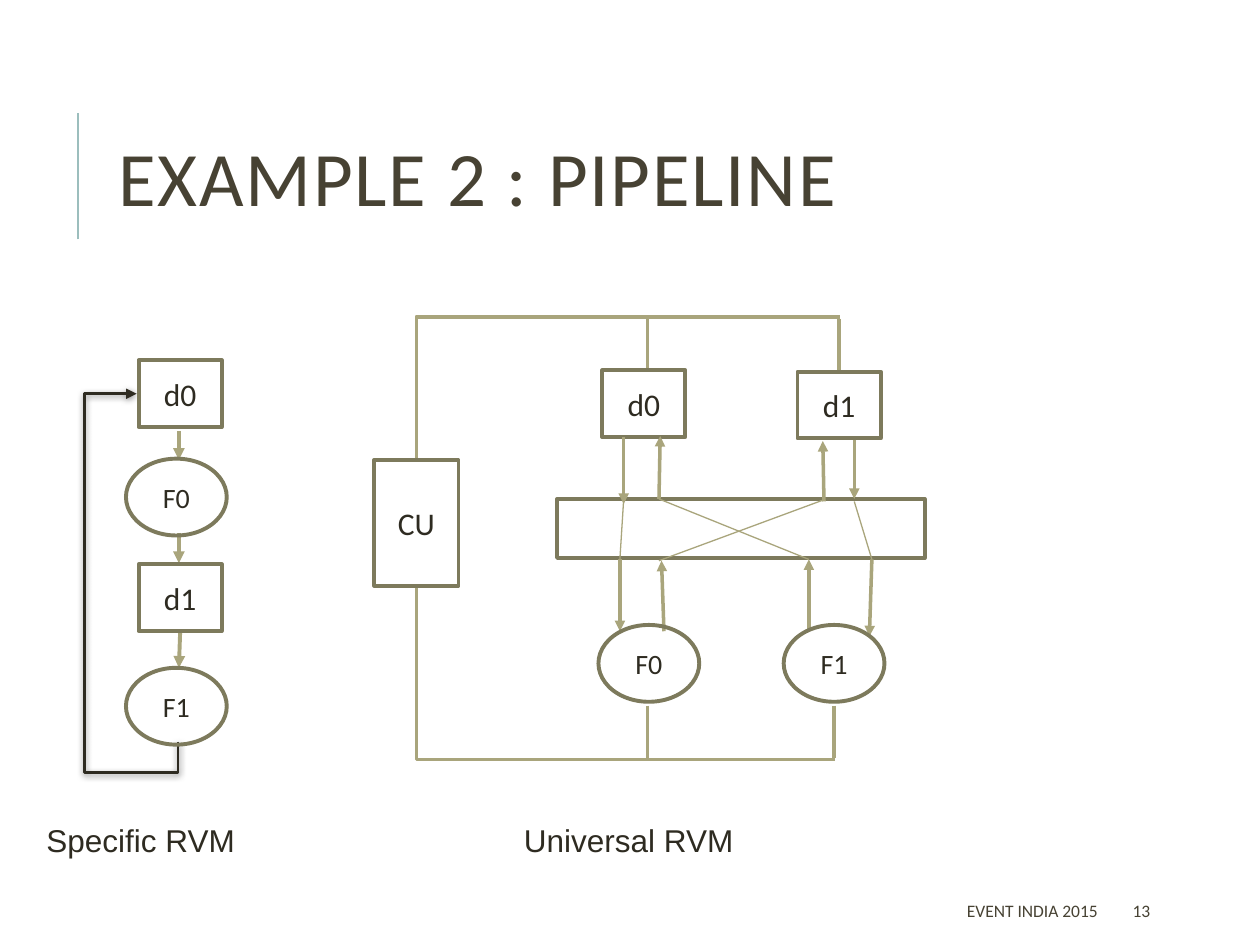
from dataclasses import dataclass

import pptx
import pptx.dml.color
import pptx.enum.shapes
import pptx.enum.text
import pptx.oxml
import pptx.oxml.ns
import pptx.util

Inches = pptx.util.Inches
Pt = pptx.util.Pt
Anchor = pptx.enum.text.MSO_ANCHOR
Align = pptx.enum.text.PP_ALIGN
Kind = pptx.enum.shapes.MSO_SHAPE
Link = pptx.enum.shapes.MSO_CONNECTOR

WIRE, EDGE, INK, TITLE, ACCENT = "A9A57C", "7D7A5C", "2E2B21", "474233", "9CBEBD"
NAMESPACE = pptx.oxml.ns.nsdecls("a")


@dataclass
class Block:
    label: str
    left: float
    top: float
    width: float = 0.66
    height: float = 0.53
    kind: Kind = Kind.RECTANGLE
    size: float = 18
    weight: float = 2.25


@dataclass
class Wire:
    x1: float
    y1: float
    x2: float
    y2: float
    weight: float = 2
    arrow: bool = False
    color: str = WIRE


@dataclass
class Elbow:
    """A bent connector, given by its frame before it is turned."""
    left: float
    top: float
    width: float
    height: float
    turn: int
    flips: str
    preset: str
    weight: float
    color: str = WIRE
    arrow: bool = False
    shadow: bool = False
    adjustments: tuple[int, ...] = ()


def rgb(value: str) -> pptx.dml.color.RGBColor:
    return pptx.dml.color.RGBColor.from_string(value)


def write(frame, text: str, size: float, color: str, font: str = "Calibri",
          align: Align = Align.LEFT, anchor: Anchor = Anchor.MIDDLE):
    frame.word_wrap = True
    frame.vertical_anchor = anchor
    para = frame.paragraphs[0]
    para.alignment = align
    span = para.add_run()
    span.text = text
    span.font.size, span.font.name = Pt(size), font
    span.font.color.rgb = rgb(color)
    return para


def add_text(page, left: float, top: float, width: float, height: float,
             text: str, size: float, color: str, **style) -> None:
    box = page.shapes.add_textbox(Inches(left), Inches(top), Inches(width), Inches(height))
    write(box.text_frame, text, size, color, **style)


def ellipse(label: str, left: float, top: float) -> Block:
    return Block(label, left, top, 0.8, 0.61, Kind.OVAL, 16)


def add_block(page, block: Block) -> None:
    shape = page.shapes.add_shape(block.kind, Inches(block.left), Inches(block.top),
                                  Inches(block.width), Inches(block.height))
    shape.shadow.inherit = False
    shape.fill.background()
    shape.line.color.rgb = rgb(EDGE)
    shape.line.width = Pt(block.weight)
    if block.label:
        write(shape.text_frame, block.label, block.size, INK, align=Align.CENTER)


def style_connector(connector, color: str, weight: float, arrow: bool,
                    shadow: bool = False) -> None:
    connector.line.color.rgb = rgb(color)
    connector.line.width = Pt(weight)
    properties = connector.element.spPr
    if arrow:
        properties.find(pptx.oxml.ns.qn("a:ln")).append(
            pptx.oxml.parse_xml(f'<a:tailEnd {NAMESPACE} type="triangle"/>'))
    effect = ('<a:outerShdw blurRad="50800" dist="12700" dir="5400000" rotWithShape="0">'
              '<a:srgbClr val="000000"><a:alpha val="50000"/></a:srgbClr>'
              '</a:outerShdw>') if shadow else ""
    properties.append(pptx.oxml.parse_xml(f"<a:effectLst {NAMESPACE}>{effect}</a:effectLst>"))


def add_wire(page, wire: Wire) -> None:
    connector = page.shapes.add_connector(Link.STRAIGHT, Inches(wire.x1), Inches(wire.y1),
                                          Inches(wire.x2), Inches(wire.y2))
    style_connector(connector, wire.color, wire.weight, wire.arrow)


def add_elbow(page, elbow: Elbow) -> None:
    connector = page.shapes.add_connector(
        Link.ELBOW, Inches(elbow.left), Inches(elbow.top),
        Inches(elbow.left + elbow.width), Inches(elbow.top + elbow.height))
    properties = connector.element.spPr
    frame = properties.find(pptx.oxml.ns.qn("a:xfrm"))
    frame.set("rot", str(elbow.turn * 60000))
    for flip in elbow.flips:
        frame.set(f"flip{flip.upper()}", "1")
    guides = "".join(f'<a:gd name="adj{number}" fmla="val {value}"/>'
                     for number, value in enumerate(elbow.adjustments, 1))
    geometry = properties.find(pptx.oxml.ns.qn("a:prstGeom"))
    properties.replace(geometry, pptx.oxml.parse_xml(
        f'<a:prstGeom {NAMESPACE} prst="{elbow.preset}"><a:avLst>{guides}</a:avLst></a:prstGeom>'))
    style_connector(connector, elbow.color, elbow.weight, elbow.arrow, elbow.shadow)


def add_heading(page) -> None:
    add_wire(page, Wire(0.62, 1.9, 0.62, 0.9, 1.5, color=ACCENT))
    title = page.shapes.title
    title.left, title.top = Inches(0.84), Inches(0.64)
    title.width, title.height = Inches(7.97), Inches(1.64)
    para = write(title.text_frame, "EXAMPLE 2 : PIPELINE", 44, TITLE)
    para.line_spacing = 0.8
    # Letter spacing of one point
    title.element.find(".//" + pptx.oxml.ns.qn("a:rPr")).set("spc", "100")


# Specific machine: one chain with a feedback loop
CHAIN_WIRES = [
    Wire(1.42, 3.42, 1.42, 3.65, 2.25, True),
    Wire(1.42, 4.23, 1.42, 4.47, 2.25, True),
    Wire(1.43, 5.01, 1.42, 5.3, 2.25, True),
]
CHAIN_BLOCKS = [Block("d0", 1.1, 2.86), ellipse("F0", 1, 3.64),
                Block("d1", 1.1, 4.48), ellipse("F1", 1, 5.3)]
FEEDBACK = Elbow(-0.13, 4.34, 2.76, 0.33, 90, "h", "bentConnector4", 1.5, INK,
                 arrow=True, shadow=True, adjustments=(-9000, 225000))

# Universal machine: control unit and switch between data and functions
SWITCH_BLOCKS = [Block("", 4.42, 3.96, 2.92, 0.47, weight=2),
                 Block("CU", 2.97, 3.65, 0.67, 1, weight=2)]
DATA_BLOCKS = [Block("d0", 4.78, 2.94), Block("d1", 6.33, 2.95),
               ellipse("F0", 4.75, 4.96), ellipse("F1", 6.22, 4.96)]
CROSSINGS = [Wire(4.95, 3.96, 4.92, 4.44, 0.75), Wire(5.23, 4.45, 6.53, 3.97, 0.75),
             Wire(6.78, 3.98, 6.92, 4.44, 0.75), Wire(5.23, 3.96, 6.42, 4.44, 0.75)]
FUNCTION_WIRES = [Wire(4.92, 4.44, 4.92, 5.01, arrow=True),
                  Wire(5.27, 5.01, 5.25, 4.45, arrow=True),
                  Wire(6.42, 5.01, 6.42, 4.44, arrow=True),
                  Wire(6.92, 4.44, 6.9, 5.05, arrow=True)]
DATA_WIRES = [Wire(4.95, 3.47, 4.95, 4, arrow=True), Wire(5.23, 3.96, 5.24, 3.46, arrow=True),
              Wire(6.54, 3.98, 6.53, 3.5, arrow=True), Wire(6.78, 3.49, 6.78, 3.96, arrow=True)]
CONTROL_ELBOWS = [Elbow(4.41, 1.41, 1.15, 3.36, 90, "hv", "bentConnector2", 2),
                  Elbow(4.28, 3.68, 1.37, 3.32, 270, "h", "bentConnector2", 1.75)]
CONTROL_WIRES = [Wire(6.66, 2.53, 6.66, 2.95), Wire(5.14, 2.52, 5.14, 2.94),
                 Wire(6.62, 5.6, 6.62, 6.02), Wire(5.14, 5.6, 5.14, 6.02)]


def main() -> None:
    deck = pptx.Presentation()
    deck.slide_width, deck.slide_height = Inches(10), Inches(7.5)
    page = deck.slides.add_slide(deck.slide_layouts[5])
    add_heading(page)

    # Footer
    add_text(page, 3.97, 7.08, 4.84, 0.3, "EVENT INDIA 2015", 10, TITLE, align=Align.RIGHT)
    add_text(page, 8.89, 7.08, 0.8, 0.3, "13", 10, TITLE)

    # Diagrams, from back to front
    for elbow in [FEEDBACK, *CONTROL_ELBOWS]:
        add_elbow(page, elbow)
    for block in SWITCH_BLOCKS:
        add_block(page, block)
    for wire in CHAIN_WIRES + FUNCTION_WIRES + CROSSINGS + CONTROL_WIRES:
        add_wire(page, wire)
    for block in CHAIN_BLOCKS + DATA_BLOCKS:
        add_block(page, block)
    for wire in DATA_WIRES:
        add_wire(page, wire)

    # Captions
    for left, width, caption in [(0.27, 1.73, "Specific RVM"), (4.06, 2.35, "Universal RVM")]:
        add_text(page, left, 6.47, width, 0.4, caption, 18, INK, font="Arial", anchor=Anchor.TOP)
    deck.save("out.pptx")


if __name__ == "__main__":
    main()
